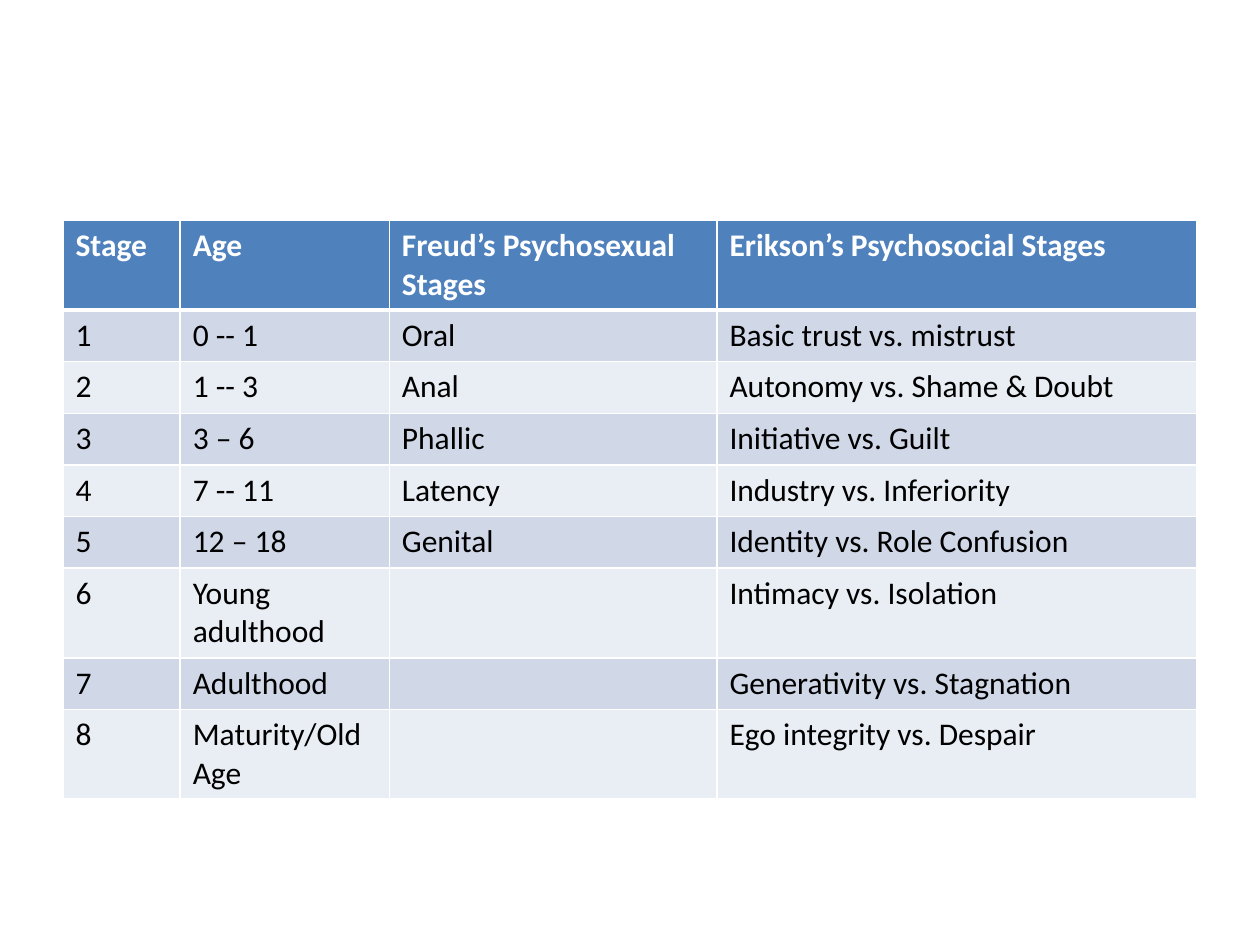
"""Build a slide with a table of developmental stages."""
from dataclasses import dataclass

from lxml import etree
from pptx import Presentation
from pptx import util as u
from pptx.dml.color import RGBColor
from pptx.oxml import ns
from pptx.table import Table, _Cell

HUES = {"head": "4F81BD", "odd": "D0D8E8", "even": "E9EDF4", "rule": "FFFFFF",
        "light": "FFFFFF", "dark": "000000"}
WIDTHS = (0.93, 1.66, 2.6, 3.81)
HEIGHT = 0.41


@dataclass
class Row:
    """Hold the words of one table row."""
    stage: str
    age: str
    freud: str
    erikson: str

    def words(self) -> tuple[str, ...]:
        """Return the words from left to right."""
        return self.stage, self.age, self.freud, self.erikson


@dataclass
class Look:
    """Hold the format of one table row."""
    fill: str
    ink: str
    bold: bool
    top: float
    base: float


ROWS = (
    Row("Stage", "Age", "Freud’s Psychosexual Stages", "Erikson’s Psychosocial Stages"),
    Row("1", "0 -- 1", "Oral", "Basic trust vs. mistrust"),
    Row("2", "1 -- 3", "Anal", "Autonomy vs. Shame & Doubt"),
    Row("3", "3 – 6", "Phallic", "Initiative vs. Guilt"),
    Row("4", "7 -- 11", "Latency", "Industry vs. Inferiority"),
    Row("5", "12 – 18", "Genital", "Identity vs. Role Confusion"),
    Row("6", "Young adulthood", "", "Intimacy vs. Isolation"),
    Row("7", "Adulthood", "", "Generativity vs. Stagnation"),
    Row("8", "Maturity/Old Age", "", "Ego integrity vs. Despair"),
)


def pick(index: int) -> Look:
    """Return the format for a row by its place."""
    if index == 0:
        return Look("head", "light", True, 1, 3)
    return Look("odd" if index % 2 else "even", "dark", False, 3 if index == 1 else 1, 1)


def edge(cell: _Cell, look: Look) -> None:
    """Draw the four borders of a cell."""
    props = cell._tc.get_or_add_tcPr()
    sides = {"lnL": 1, "lnR": 1, "lnT": look.top, "lnB": look.base}
    for place, (side, width) in enumerate(sides.items()):
        line = etree.Element(ns.qn(f"a:{side}"), w=str(u.Pt(width)))
        fill = etree.SubElement(line, ns.qn("a:solidFill"))
        etree.SubElement(fill, ns.qn("a:srgbClr"), val=HUES["rule"])
        props.insert(place, line)


def write(cell: _Cell, words: str, look: Look) -> None:
    """Fill a cell and set its words."""
    cell.fill.solid()
    cell.fill.fore_color.rgb = RGBColor.from_string(HUES[look.fill])
    edge(cell, look)
    cell.text = words
    font = cell.text_frame.paragraphs[0].font
    if words:
        font = cell.text_frame.paragraphs[0].runs[0].font
    form = {"name": "Calibri", "size": u.Pt(18), "bold": look.bold}
    for key, value in form.items():
        setattr(font, key, value)
    font.color.rgb = RGBColor.from_string(HUES[look.ink])


def draw(table: Table) -> None:
    """Size the grid and write every row."""
    for column, width in zip(table.columns, WIDTHS):
        column.width = u.Inches(width)
    for index, row in enumerate(ROWS):
        table.rows[index].height = u.Inches(HEIGHT)
        for place, words in enumerate(row.words()):
            write(table.cell(index, place), words, pick(index))


def main() -> None:
    """Make the slide and save it."""
    deck = Presentation()
    deck.slide_width, deck.slide_height = u.Inches(10), u.Inches(7.5)
    slide = deck.slides.add_slide(deck.slide_layouts[6])
    frame = slide.shapes.add_table(len(ROWS), len(WIDTHS), u.Inches(0.5), u.Inches(1.75),
                                   u.Inches(sum(WIDTHS)), u.Inches(HEIGHT * len(ROWS)))
    draw(frame.table)
    deck.save("out.pptx")


if __name__ == "__main__":
    main()
